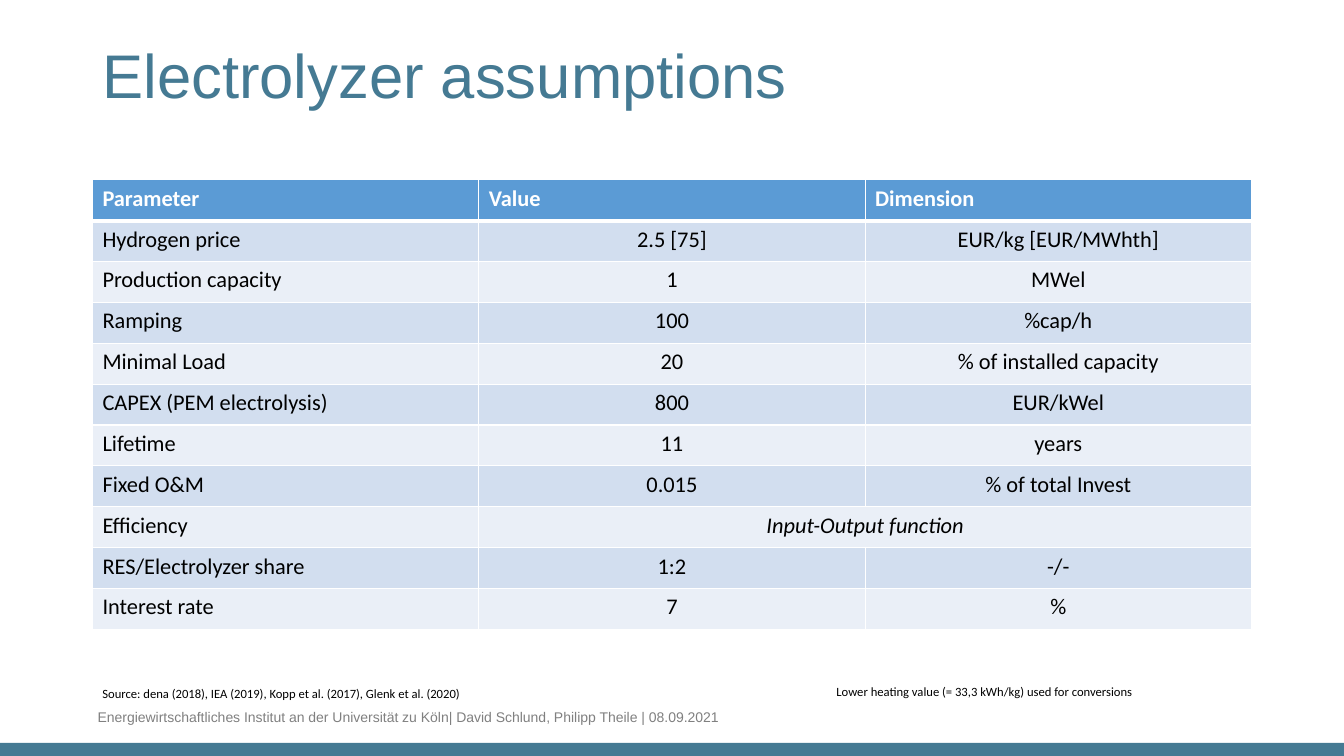
from lxml.etree import SubElement
from pptx import Presentation
from pptx.dml.color import RGBColor
from pptx.enum.shapes import MSO_SHAPE
from pptx.enum.text import PP_ALIGN
from pptx.oxml.ns import qn
from pptx.util import Cm, Pt

COLORS = {
    "teal": "457A93",
    "gray": "808080",
    "header": "5B9BD5",
    "odd": "D2DEEF",
    "even": "EAEFF7",
    "white": "FFFFFF",
    "black": "000000",
}
HEADER = ("Parameter", "Value", "Dimension")
ASSUMPTIONS = [
    ("Hydrogen price", "2.5 [75]", "EUR/kg [EUR/MWhth]"),
    ("Production capacity", "1", "MWel"),
    ("Ramping", "100", "%cap/h"),
    ("Minimal Load", "20", "% of installed capacity"),
    ("CAPEX (PEM electrolysis)", "800", "EUR/kWel"),
    ("Lifetime", "11", "years"),
    ("Fixed O&M", "0.015", "% of total Invest"),
    ("Efficiency", "Input-Output function"),
    ("RES/Electrolyzer share", "1:2", "-/-"),
    ("Interest rate", "7", "%"),
]


def rgb(name):
    return RGBColor.from_string(COLORS[name])


def write(tf, text, size, color="black", font="Calibri", bold=False,
          italic=False, align=PP_ALIGN.LEFT, spacing=None):
    p = tf.paragraphs[0]
    p.alignment = align
    p.line_spacing = spacing
    r = p.add_run()
    r.text = text
    r.font.name = font
    r.font.size = Pt(size)
    r.font.bold = bold
    r.font.italic = italic
    r.font.color.rgb = rgb(color)


def add_text(s, left, top, width, height, text, size, **style):
    tf = s.shapes.add_textbox(Cm(left), Cm(top), Cm(width), Cm(height)).text_frame
    tf.word_wrap = True
    write(tf, text, size, **style)


def add_bar(s, left, top, width, height, color):
    bar = s.shapes.add_shape(MSO_SHAPE.RECTANGLE, Cm(left), Cm(top), Cm(width), Cm(height))
    bar.shadow.inherit = False
    bar.fill.solid()
    bar.fill.fore_color.rgb = rgb(color)
    bar.line.fill.background()


def set_borders(cell, top, bottom):
    tcPr = cell._tc.get_or_add_tcPr()
    for side, width in (("L", 1), ("R", 1), ("T", top), ("B", bottom)):
        ln = SubElement(tcPr, qn(f"a:ln{side}"), w=str(Pt(width)))
        fill = SubElement(ln, qn("a:solidFill"))
        SubElement(fill, qn("a:srgbClr"), val=COLORS["white"])


def fill_cell(cell, color):
    cell.fill.solid()
    cell.fill.fore_color.rgb = rgb(color)


def add_assumptions(s, left, top, width, row_height):
    rows = [HEADER] + ASSUMPTIONS
    table = s.shapes.add_table(len(rows), len(HEADER), Cm(left), Cm(top),
                               Cm(width), Cm(row_height * len(rows))).table
    for i, values in enumerate(rows):
        table.rows[i].height = Cm(row_height)
        color = "header" if i == 0 else "odd" if i % 2 else "even"
        for cell in table.rows[i].cells:
            set_borders(cell, 3 if i == 1 else 1, 3 if i == 0 else 1)
            fill_cell(cell, color)
        spans = len(values) < len(HEADER)
        if spans:
            table.cell(i, 1).merge(table.cell(i, 2))
        for j, text in enumerate(values):
            write(table.cell(i, j).text_frame, text, 16,
                  color="black" if i else "white", bold=i == 0,
                  italic=spans and j == 1,
                  align=PP_ALIGN.CENTER if i and j else PP_ALIGN.LEFT)


def main():
    prs = Presentation()
    prs.slide_width, prs.slide_height = Cm(33.87), Cm(19.05)
    s = prs.slides.add_slide(prs.slide_layouts[6])
    add_bar(s, 0, 18.72, 33.87, 0.33, "teal")
    add_text(s, 2.21, 17.73, 21.74, 0.69,
             "Energiewirtschaftliches Institut an der Universität zu Köln"
             "| David Schlund, Philipp Theile | 08.09.2021",
             10, color="gray", font="Arial")
    add_text(s, 2.33, 1.02, 29.21, 3.68, "Electrolyzer assumptions", 44,
             color="teal", font="Arial", spacing=0.9)
    add_assumptions(s, 2.33, 4.53, 29.21, 1.03)
    add_text(s, 20.83, 17.12, 12.45, 0.64,
             "Lower heating value (= 33,3 kWh/kg) used for conversions", 9)
    add_text(s, 2.33, 17.17, 12.45, 0.64,
             "Source: dena (2018), IEA (2019), Kopp et al. (2017), Glenk et al. (2020)", 9)
    prs.save("out.pptx")


if __name__ == "__main__":
    main()
